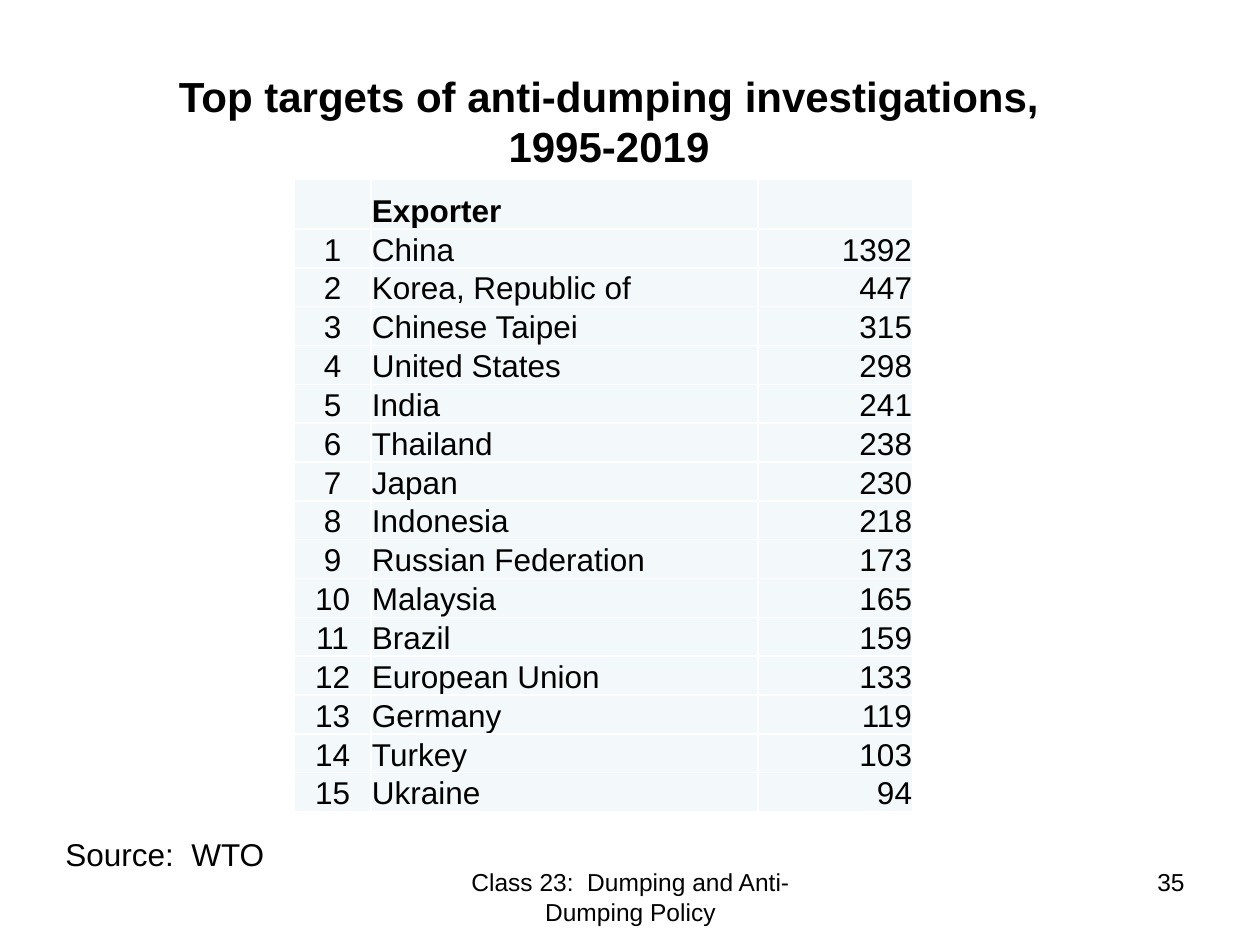
from lxml import etree
from pptx import Presentation
from pptx import util as u
from pptx.dml.color import RGBColor
from pptx.enum import text
from pptx.oxml.ns import qn

SCALE = u.Inches(1) / 126
COLORS = {"ink": "000000", "cell": "F3F9FA", "rule": "FFFFFF"}
LEFT, MID, RIGHT = text.PP_ALIGN.LEFT, text.PP_ALIGN.CENTER, text.PP_ALIGN.RIGHT
COLS = [(77, MID), (387, LEFT), (155, RIGHT)]
HEAD, ROW = 50, 36
TARGETS = [
    ("China", 1392),
    ("Korea, Republic of", 447),
    ("Chinese Taipei", 315),
    ("United States", 298),
    ("India", 241),
    ("Thailand", 238),
    ("Japan", 230),
    ("Indonesia", 218),
    ("Russian Federation", 173),
    ("Malaysia", 165),
    ("Brazil", 159),
    ("European Union", 133),
    ("Germany", 119),
    ("Turkey", 103),
    ("Ukraine", 94),
]


def px(n):
    return u.Emu(round(n * SCALE))


def style(para, size, align, bold=False):
    para.alignment = align
    for run in para.runs:
        font = run.font
        font.name, font.size, font.bold = "Arial", u.Pt(size), bold
        font.color.rgb = RGBColor.from_string(COLORS["ink"])


def label(slide, box, words, size, align, bold=False):
    frame = slide.shapes.add_textbox(*map(px, box)).text_frame
    frame.word_wrap = True
    frame.text = words
    style(frame.paragraphs[0], size, align, bold)
    return frame


def border(cell):
    """Draw a thin rule on all four sides of the cell."""
    props = cell._tc.get_or_add_tcPr()
    for side in ("lnL", "lnR", "lnT", "lnB"):
        line = etree.SubElement(props, qn("a:" + side), w=str(u.Pt(1)))
        fill = etree.SubElement(line, qn("a:solidFill"))
        etree.SubElement(fill, qn("a:srgbClr"), val=COLORS["rule"])


def fill_cell(cell, words, align, bold):
    cell.margin_left = cell.margin_right = cell.margin_top = px(1)
    cell.margin_bottom = 0
    cell.vertical_anchor = text.MSO_ANCHOR.BOTTOM
    border(cell)
    cell.fill.solid()
    cell.fill.fore_color.rgb = RGBColor.from_string(COLORS["cell"])
    if words:
        cell.text_frame.text = words
        style(cell.text_frame.paragraphs[0], 18, align, bold)


def ranking(slide, left, top):
    rows = [("", "Exporter", "")]
    rows += [(str(i), name, str(n)) for i, (name, n) in enumerate(TARGETS, 1)]
    width = sum(w for w, _ in COLS)
    height = HEAD + ROW * len(TARGETS)
    box = map(px, (left, top, width, height))
    table = slide.shapes.add_table(len(rows), len(COLS), *box).table
    table.first_row = table.horz_banding = False
    for col, (wide, _) in zip(table.columns, COLS):
        col.width = px(wide)
    for r, row in enumerate(rows):
        table.rows[r].height = px(ROW if r else HEAD)
        for c, words in enumerate(row):
            fill_cell(table.cell(r, c), words, COLS[c][1], r == 0)


def main():
    deck = Presentation()
    deck.slide_width, deck.slide_height = px(1260), px(945)
    slide = deck.slides.add_slide(deck.slide_layouts[6])
    label(slide, (431, 861, 399, 66),
          "Class 23:  Dumping and Anti-Dumping Policy", 14, MID)
    label(slide, (903, 861, 294, 66), "35", 14, RIGHT)
    ranking(slide, 294, 179)
    title = label(slide, (147, 63, 924, 115),
                  "Top targets of anti-dumping investigations, 1995-2019",
                  24, MID, True)
    title.vertical_anchor = text.MSO_ANCHOR.MIDDLE
    label(slide, (53, 829, 536, 50), "Source:  WTO", 18, LEFT)
    deck.save("out.pptx")


if __name__ == "__main__":
    main()
